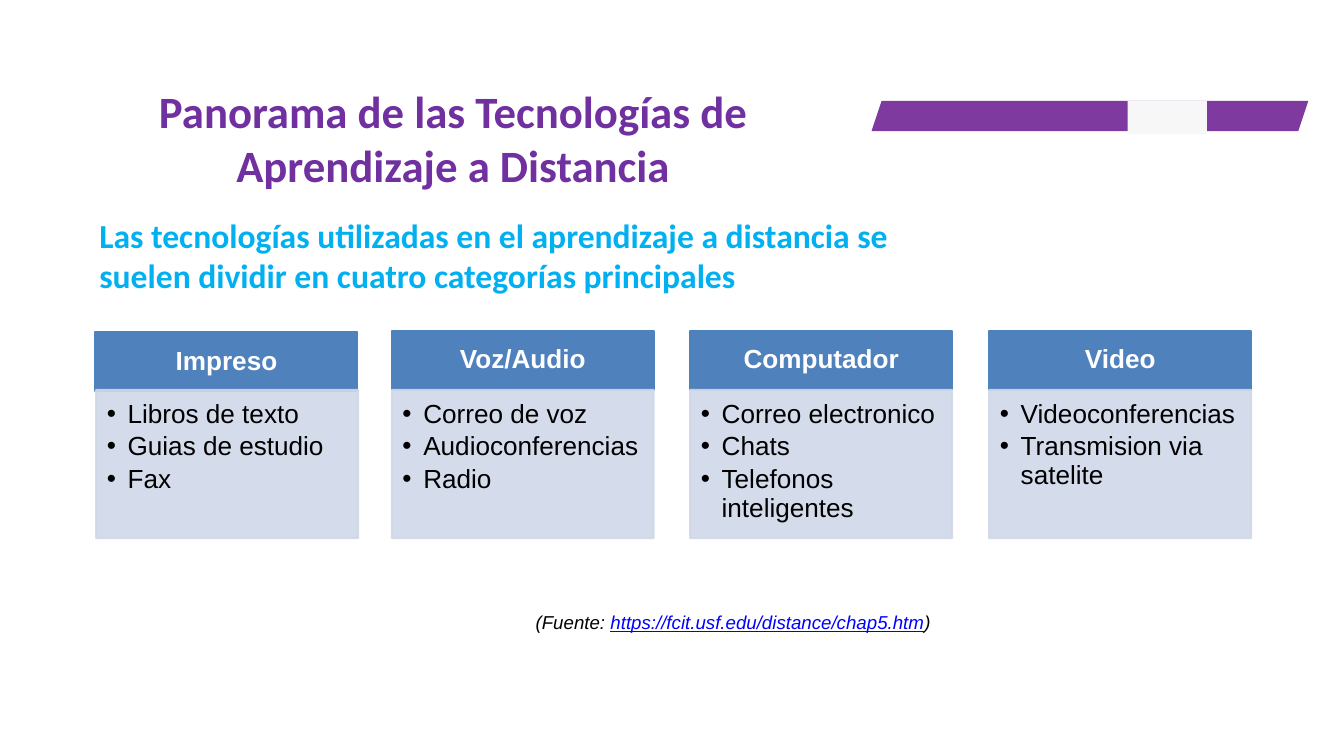
from lxml import etree
from pptx import Presentation
from pptx.dml.color import RGBColor
from pptx.enum.shapes import MSO_SHAPE
from pptx.enum.text import MSO_ANCHOR, PP_ALIGN
from pptx.oxml.ns import qn
from pptx.util import Inches, Pt

RECT = MSO_SHAPE.RECTANGLE
TOP, MIDDLE = MSO_ANCHOR.TOP, MSO_ANCHOR.MIDDLE
LEFT, CENTER = PP_ALIGN.LEFT, PP_ALIGN.CENTER

COLORS = {
    "title": "7030A0", "lead": "00B0F0", "band": "7F3AA0", "notch": "F7F7F7",
    "head": "4F81BD", "body": "D0D8E8", "white": "FFFFFF", "black": "000000",
    "link": "0000FF",
}
WIDTH, HEAD, BODY, BODY_TOP = 3.9, 0.88, 2.21, 5.8
COLUMNS = [
    ("Impreso", 1.43, (1.42, 4.94), ["Libros de texto", "Guias de estudio", "Fax"]),
    ("Voz/Audio", 5.83, (5.83, 4.92), ["Correo de voz", "Audioconferencias", "Radio"]),
    ("Computador", 10.27, (10.27, 4.92),
     ["Correo electronico", "Chats", "Telefonos inteligentes"]),
    ("Video", 14.72, (14.72, 4.92), ["Videoconferencias", "Transmision via satelite"]),
]


class Deck:
    """Holds the style and the current slide."""

    def __init__(self, slide):
        self.slide = slide

    def color(self, name):
        return RGBColor.from_string(COLORS[name])

    def paint(self, shape, fill, line=None):
        shape.shadow.inherit = False
        shape.fill.solid()
        shape.fill.fore_color.rgb = self.color(fill)
        if line:
            shape.line.color.rgb = self.color(line)
            shape.line.width = Pt(2)
        else:
            shape.line.fill.background()

    def poly(self, points, fill):
        spots = [(Inches(x), Inches(y)) for x, y in points]
        pen = self.slide.shapes.build_freeform(*spots[0])
        pen.add_line_segments(spots[1:], close=True)
        self.paint(pen.convert_to_shape(), fill)

    def rect(self, place, fill, line=None, alpha=None):
        shape = self.slide.shapes.add_shape(RECT, *map(Inches, place))
        self.paint(shape, fill, line)
        if alpha:
            for node in shape.element.spPr.iter(qn("a:srgbClr")):
                etree.SubElement(node, qn("a:alpha")).set("val", str(alpha * 1000))
        return shape

    def frame(self, shape, insets, anchor=TOP):
        frame = shape.text_frame
        frame.word_wrap = True
        frame.vertical_anchor = anchor
        (frame.margin_left, frame.margin_top,
         frame.margin_right, frame.margin_bottom) = map(Inches, insets)
        return frame

    def box(self, place, insets=(0.1, 0.05, 0.1, 0.05)):
        return self.frame(self.slide.shapes.add_textbox(*map(Inches, place)), insets)

    def run(self, para, text, size, color, font="Arial", bold=False,
            italic=False, under=False):
        run = para.add_run()
        run.text = text
        style = run.font
        style.name, style.size = font, Pt(size)
        style.bold, style.italic, style.underline = bold, italic, under
        style.color.rgb = self.color(color)

    def bullet(self, para, text):
        props = para._p.get_or_add_pPr()
        props.set("marL", str(Inches(0.31)))
        props.set("indent", str(Inches(-0.31)))
        para.level = 1
        para.alignment = LEFT
        para.line_spacing = 0.9
        para.space_after = Pt(5)
        etree.SubElement(props, qn("a:buFont")).set("typeface", "Arial")
        etree.SubElement(props, qn("a:buChar")).set("char", "•")
        self.run(para, text, 28, "black")

    def column(self, name, left, corner, items):
        head = self.rect((*corner, WIDTH, HEAD), "head", "head")
        para = self.frame(head, (0.22, 0.12, 0.22, 0.12), MIDDLE).paragraphs[0]
        para.alignment = CENTER
        para.line_spacing = 0.9
        self.run(para, name, 28, "white", bold=True)
        body = self.rect((left, BODY_TOP, WIDTH, BODY), "body", "body", 90)
        frame = self.frame(body, (0.16, 0.16, 0.22, 0.24))
        for i, item in enumerate(items):
            para = frame.add_paragraph() if i else frame.paragraphs[0]
            self.bullet(para, item)


def main():
    show = Presentation()
    show.slide_width, show.slide_height = Inches(20), Inches(11.25)
    deck = Deck(show.slides.add_slide(show.slide_layouts[6]))

    deck.poly([(13.12, 1.5), (19.47, 1.5), (19.32, 1.95), (12.97, 1.95)], "band")
    deck.rect((16.78, 1.5, 1.18, 0.5), "notch")

    title = deck.box((0.58, 1.15, 12.33, 1.46), (0.2, 0.1, 0.2, 0.1)).paragraphs[0]
    title.alignment = CENTER
    deck.run(title, "Panorama de las Tecnologías de Aprendizaje a Distancia",
             48, "title", "Calibri", bold=True)

    source = deck.box((3.5, 9.04, 13.33, 0.44)).paragraphs[0]
    source.alignment = CENTER
    source._p.get_or_add_pPr().set("marL", str(Inches(1.49)))
    deck.run(source, "(Fuente: ", 20, "black", italic=True)
    deck.run(source, "https://fcit.usf.edu/distance/chap5.htm", 20, "link",
             italic=True, under=True)
    deck.run(source, ")", 20, "black", italic=True)

    for column in COLUMNS:
        deck.column(*column)

    lead = deck.box((1.38, 3.15, 12.79, 1.31)).paragraphs[0]
    deck.run(lead, "Las tecnologías utilizadas en el aprendizaje a distancia se "
             "suelen dividir en cuatro categorías principales",
             36, "lead", "Calibri", bold=True)

    show.save("out.pptx")


if __name__ == "__main__":
    main()
